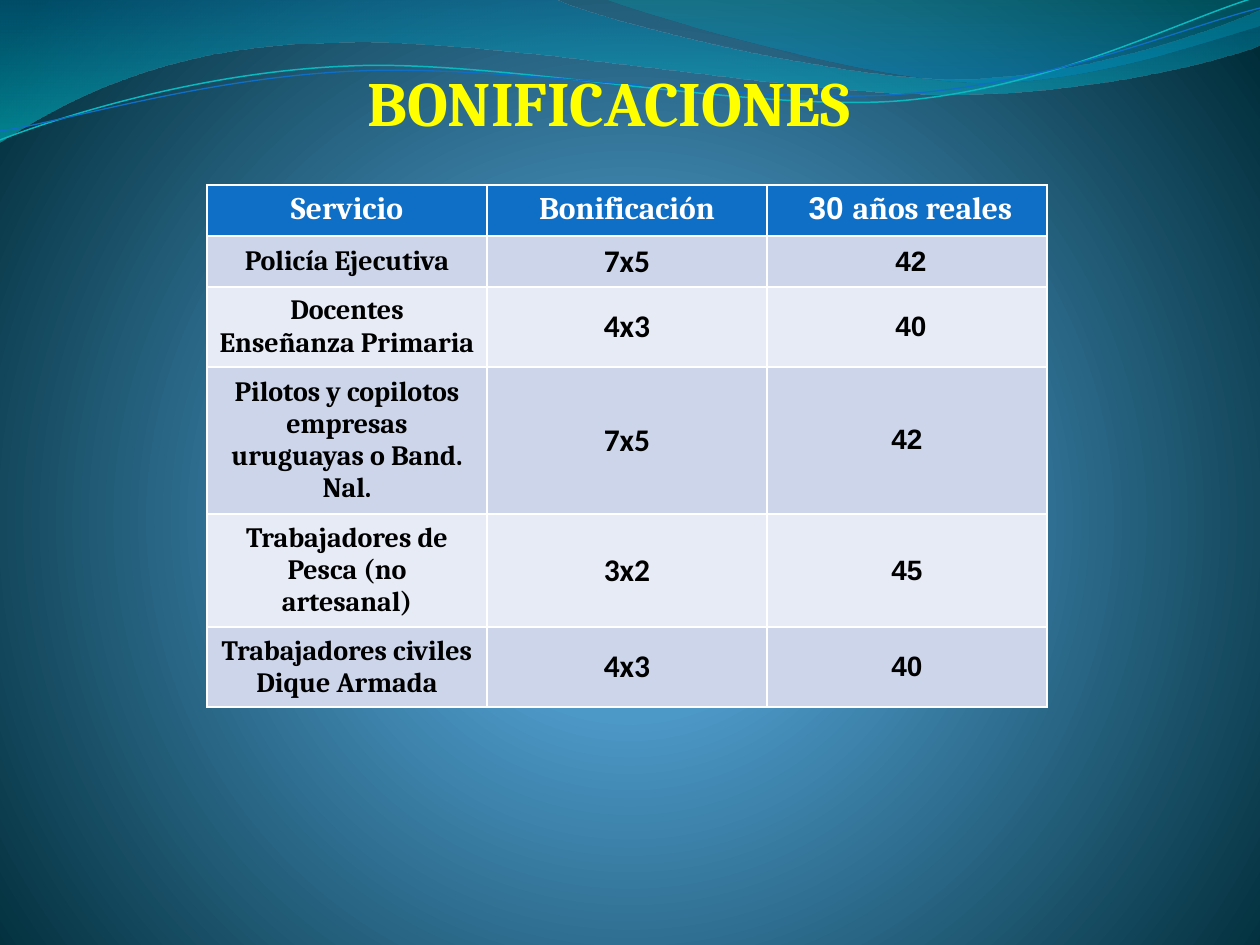
import math

import pptx
import pptx.util
import pptx.oxml
import pptx.oxml.ns
import pptx.dml.color
import pptx.enum.text

SCALE = 914400 / 126
COLORS = {
    "glow": "4AA0D6", "sky": "4C98C7", "deep": "002C38",
    "wave_blue": "0074A1", "wave_cyan": "00C6CF",
    "crest_teal": "00A1A9", "crest_blue": "008BBF",
    "line_teal": "0AB8BF", "accent": "0F6FC6",
    "title": "FFFF00", "white": "FFFFFF", "black": "000000",
    "band_dark": "CCD5EA", "band_light": "E7EBF5",
}
RGB = {name: pptx.dml.color.RGBColor.from_string(value) for name, value in COLORS.items()}
NS = 'xmlns:a="http://schemas.openxmlformats.org/drawingml/2006/main"'
CENTER = pptx.enum.text.PP_ALIGN.CENTER


def px(length):
    return pptx.util.Emu(round(length * SCALE))


def set_gradient(element, stops, shade):
    old = element.find(".//" + pptx.oxml.ns.qn("a:gradFill"))
    marks = "".join(
        f'<a:gs pos="{place * 1000}"><a:srgbClr val="{COLORS[color]}">'
        f'<a:alpha val="{alpha * 1000}"/></a:srgbClr></a:gs>'
        for place, color, alpha in stops)
    new = pptx.oxml.parse_xml(
        f'<a:gradFill {NS} rotWithShape="1"><a:gsLst>{marks}</a:gsLst>{shade}</a:gradFill>')
    old.getparent().replace(old, new)


deck = pptx.Presentation()
deck.slide_width, deck.slide_height = px(1260), px(945)
page = deck.slides.add_slide(deck.slide_layouts[6])
page.background.fill.gradient()
set_gradient(
    page._element, [(0, "glow", 100), (25, "sky", 100), (100, "deep", 100)],
    '<a:path path="circle"><a:fillToRect l="10000" t="110000" r="10000" b="100000"/></a:path>')

waves = [
    ((-1, -1, 1262, 143), 0,
     [(0, 0), (554, -1), (600, 21, 837, 79, 955, 79), (1075, 79, 1207, 33, 1260, 11),
      (1261, 45), (1239, 55, 1096, 96, 940, 94), (784, 94, 481, 35, 324, 43),
      (163, 45, 58, 105, -1, 142), (0, 0)],
     [(0, "wave_blue", 45), (100, "wave_cyan", 55)], None, 0),
    ((604, -1, 656, 88), 0,
     [(604, -1), (641, 14, 859, 78, 969, 82), (1079, 87, 1211, 40, 1260, 26),
      (1260, 0), (604, -1)],
     [(0, "crest_teal", 30), (80, "crest_blue", 45)], None, 0),
    ((-2, 28, 1262, 89), 357.3,
     [(0, 140), (60, 117, 199, 72, 349, 66), (498, 59, 747, 112, 898, 101),
      (1050, 89, 1182, 19, 1257, -3)], None, "line_teal", 0.85),
    ((-2, 38, 1263, 73), 357.3,
     [(0, 131), (59, 123, 207, 77, 357, 71), (508, 64, 752, 106, 903, 94),
      (1053, 84, 1186, 26, 1260, 8)], None, "accent", 0.75),
]
for (left, top, width, height), turn, steps, stops, line_color, line_width in waves:
    builder = page.shapes.build_freeform(px(left), px(top))
    builder.add_line_segments([(px(left + width), px(top + height))], close=False)
    wave = builder.convert_to_shape()
    wave.left, wave.top, wave.width, wave.height = px(left), px(top), px(width), px(height)
    wave.rotation = turn
    cos, sin = math.cos(math.radians(-turn)), math.sin(math.radians(-turn))
    drawing = ""
    for number, step in enumerate(steps):
        tag = "cubicBezTo" if len(step) == 6 else "lnTo" if number else "moveTo"
        drawing += f"<a:{tag}>"
        for x, y in zip(step[::2], step[1::2]):
            dx, dy = x - left - width / 2, y - top - height / 2
            local_x = px(width / 2 + dx * cos - dy * sin)
            local_y = px(height / 2 + dx * sin + dy * cos)
            drawing += f'<a:pt x="{local_x}" y="{local_y}"/>'
        drawing += f"</a:{tag}>"
    if stops:
        drawing += "<a:close/>"
    outline = wave._element.find(".//" + pptx.oxml.ns.qn("a:path"))
    outline.getparent().replace(outline, pptx.oxml.parse_xml(
        f'<a:path {NS} w="{px(width)}" h="{px(height)}">{drawing}</a:path>'))
    wave.shadow.inherit = False
    if stops:
        wave.fill.gradient()
        set_gradient(wave._element, stops, '<a:lin ang="5400000" scaled="0"/>')
        wave.line.fill.background()
    else:
        wave.fill.background()
        wave.line.color.rgb = RGB[line_color]
        wave.line.width = pptx.util.Pt(line_width)

box = page.shapes.add_textbox(px(213), px(-113), px(794), px(252))
frame = box.text_frame
frame.word_wrap = True
frame.vertical_anchor = pptx.enum.text.MSO_ANCHOR.BOTTOM
frame.margin_left = frame.margin_top = frame.margin_bottom = 0
frame.margin_right = px(2)
frame.text = "BONIFICACIONES"
para = frame.paragraphs[0]
para.alignment = CENTER
font = para.runs[0].font
font.name, font.size, font.bold = "Cambria", pptx.util.Pt(36), True
font.color.rgb = RGB["title"]

header = [
    [("Servicio", "Cambria", 18)],
    [("Bonificación", "Cambria", 18)],
    [(" ", "Cambria", 18), ("30 ", "Arial", 18), ("años reales", "Cambria", 18)],
]
services = [
    ("Policía Ejecutiva", "7x5", " 42"),
    ("Docentes Enseñanza Primaria", "4x3", " 40"),
    ("Pilotos y copilotos empresas uruguayas o Band. Nal.", "7x5", "42"),
    ("Trabajadores de Pesca (no artesanal)", "3x2", "45"),
    ("Trabajadores civiles Dique Armada", "4x3", "40"),
]
rows = [header] + [
    [[(service, "Cambria", 16)], [(bonus, "Calibri", 18)], [(years, "Arial", 16)]]
    for service, bonus, years in services]

holder = page.shapes.add_table(len(rows), 3, px(207), px(185), px(840), px(590))
table = holder.table
for column in table.columns:
    column.width = px(280)
for r, row in enumerate(rows):
    table.rows[r].height = px(51)
    for c, spans in enumerate(row):
        cell = table.cell(r, c)
        cell.fill.solid()
        cell.fill.fore_color.rgb = RGB[
            "accent" if r == 0 else "band_dark" if r % 2 else "band_light"]
        if r:
            cell.vertical_anchor = pptx.enum.text.MSO_ANCHOR.MIDDLE
        para = cell.text_frame.paragraphs[0]
        para.alignment = CENTER
        for text, name, size in spans:
            span = para.add_run()
            span.text = text
            span.font.name, span.font.size, span.font.bold = name, pptx.util.Pt(size), True
            span.font.color.rgb = RGB["black" if r else "white"]
holder.height = px(590)

deck.save("out.pptx")
